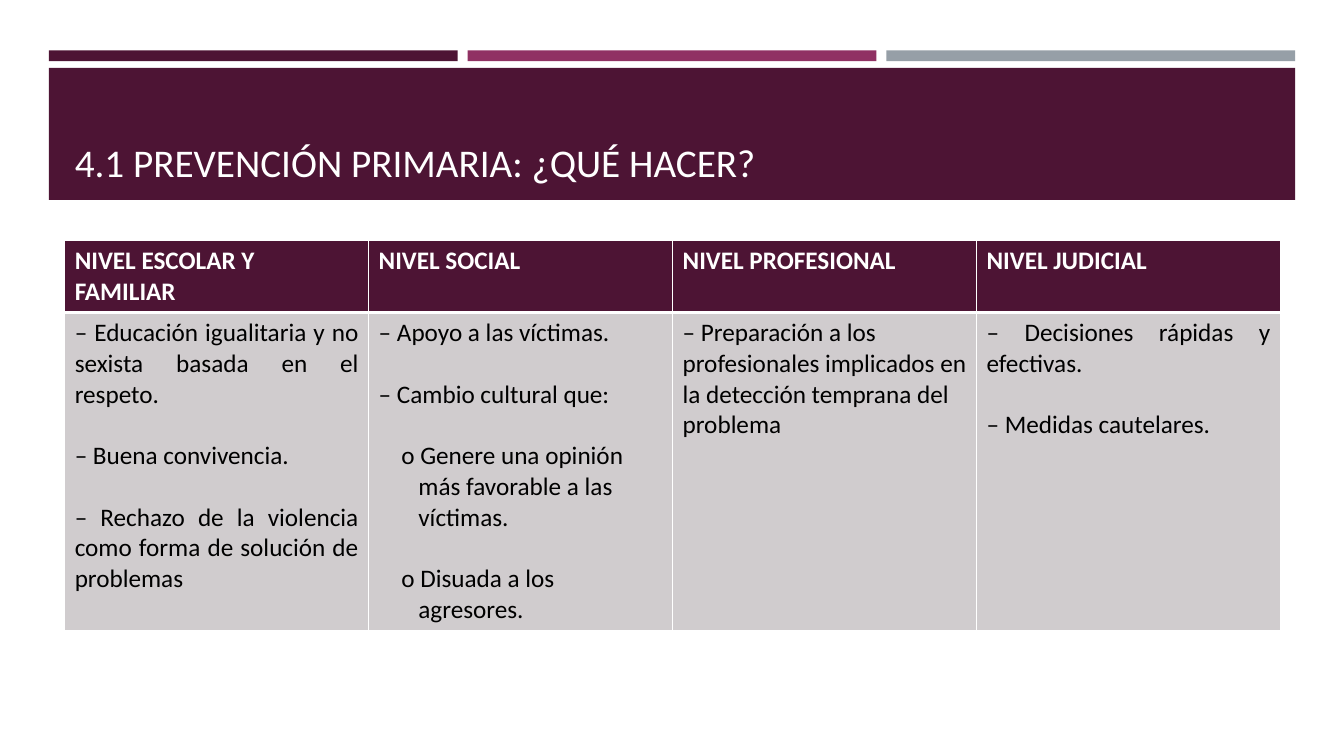
from lxml import etree
from pptx import Presentation
from pptx.dml.color import RGBColor
from pptx.enum.shapes import MSO_SHAPE
from pptx.enum.text import MSO_ANCHOR, MSO_AUTO_SIZE, PP_ALIGN
from pptx.oxml.ns import qn
from pptx.util import Cm, Pt

FONT = "Calibri"
PLUM, MAGENTA, GREY = "4D1434", "903163", "969FA7"
WHITE, BLACK, CELL_GREY = "FFFFFF", "000000", "D0CCCE"
LINE_GAP = 22
LEVELS = [
    ("NIVEL ESCOLAR Y FAMILIAR", [
        ("– Educación igualitaria y no sexista basada en el respeto.", "just"),
        ("– Buena convivencia.", "left"),
        ("– Rechazo de la violencia como forma de solución de problemas", "just"),
    ]),
    ("NIVEL SOCIAL", [
        ("– Apoyo a las víctimas.", "left"),
        ("– Cambio cultural que:", "just"),
        ("o Genere una opinión más favorable a las víctimas.", "sub"),
        ("o Disuada a los agresores.", "sub"),
    ]),
    ("NIVEL PROFESIONAL", [
        ("– Preparación a los profesionales implicados en la detección "
         "temprana del problema", "left"),
    ]),
    ("NIVEL JUDICIAL", [
        ("– Decisiones rápidas y efectivas.", "just"),
        ("– Medidas cautelares.", "just"),
    ]),
]


def rgb(color):
    """Turn a hex string into a colour."""
    return RGBColor.from_string(color)


def add_run(p, text, size, color, bold=False):
    """Add one formatted run to a paragraph."""
    r = p.add_run()
    r.text = text
    r.font.name, r.font.size, r.font.bold = FONT, Pt(size), bold
    r.font.color.rgb = rgb(color)


def add_bar(s, x, y, w, h, color):
    """Draw a plain filled rectangle."""
    sp = s.shapes.add_shape(MSO_SHAPE.RECTANGLE, Cm(x), Cm(y), Cm(w), Cm(h))
    sp.shadow.inherit = False
    sp.fill.solid()
    sp.fill.fore_color.rgb = rgb(color)
    sp.line.fill.background()


def add_header(s, x, y, w, h, title):
    """Place the three stripes, the title band and the title."""
    gap, stripe_h, band_y = 0.25, 0.27, 0.44
    stripe_w = (w - 2 * gap) / 3
    for i, color in enumerate((PLUM, MAGENTA, GREY)):
        add_bar(s, x + i * (stripe_w + gap), y, stripe_w, stripe_h, color)
    add_bar(s, x, y + band_y, w, h - band_y, PLUM)
    sp = s.shapes.title
    s.shapes._spTree.append(sp._element)
    sp.left, sp.top = Cm(x + 0.4), Cm(y + 0.69)
    sp.width, sp.height = Cm(w - 0.8), Cm(h - 0.92)
    tf = sp.text_frame
    tf.auto_size = MSO_AUTO_SIZE.NONE
    tf.vertical_anchor = MSO_ANCHOR.BOTTOM
    p = tf.paragraphs[0]
    p.alignment = PP_ALIGN.LEFT
    add_run(p, title, 28, WHITE)


def style_cell(cell, fill, bottom, top):
    """Fill a cell and draw its white borders."""
    cell.fill.solid()
    cell.fill.fore_color.rgb = rgb(fill)
    tc_pr = cell._tc.get_or_add_tcPr()
    for i, (side, width) in enumerate(
            (("lnL", 1), ("lnR", 1), ("lnT", top), ("lnB", bottom))):
        ln = etree.Element(qn(f"a:{side}"), w=str(Pt(width)))
        solid = etree.SubElement(ln, qn("a:solidFill"))
        etree.SubElement(solid, qn("a:srgbClr"), val=WHITE)
        tc_pr.insert(i, ln)


def fill_body(cell, items):
    """Write the measures of one level, a line apart."""
    tf = cell.text_frame
    for i, (text, kind) in enumerate(items):
        p = tf.add_paragraph() if i else tf.paragraphs[0]
        p.alignment = PP_ALIGN.JUSTIFY if kind == "just" else PP_ALIGN.LEFT
        if i:
            p.space_before = Pt(LINE_GAP)
        if kind == "sub":
            p_pr = p._p.get_or_add_pPr()
            p_pr.set("marL", str(Cm(1)))
            p_pr.set("indent", str(Cm(-0.43)))
            cell.margin_right = Cm(0.6)
        add_run(p, text, 18, BLACK)


def add_levels(s, x, y, w, heights):
    """Build the table of prevention levels."""
    tbl = s.shapes.add_table(2, len(LEVELS), Cm(x), Cm(y), Cm(w),
                             Cm(sum(heights))).table
    for row, h in zip(tbl.rows, heights):
        row.height = Cm(h)
    for i, (name, items) in enumerate(LEVELS):
        tbl.columns[i].width = Cm(w / len(LEVELS))
        head, body = tbl.cell(0, i), tbl.cell(1, i)
        style_cell(head, PLUM, bottom=3, top=1)
        style_cell(body, CELL_GREY, bottom=1, top=3)
        add_run(head.text_frame.paragraphs[0], name, 18, WHITE, bold=True)
        fill_body(body, items)


def main():
    """Build and save the slide."""
    prs = Presentation()
    prs.slide_width, prs.slide_height = Cm(33.87), Cm(19.05)
    s = prs.slides.add_slide(prs.slide_layouts[5])
    add_header(s, 1.23, 1.27, 31.41, 3.77,
               "4.1 PREVENCIÓN PRIMARIA: ¿QUÉ HACER?")
    add_levels(s, 1.63, 6.07, 30.64, (1.8, 7.9))
    prs.save("out.pptx")


if __name__ == "__main__":
    main()
